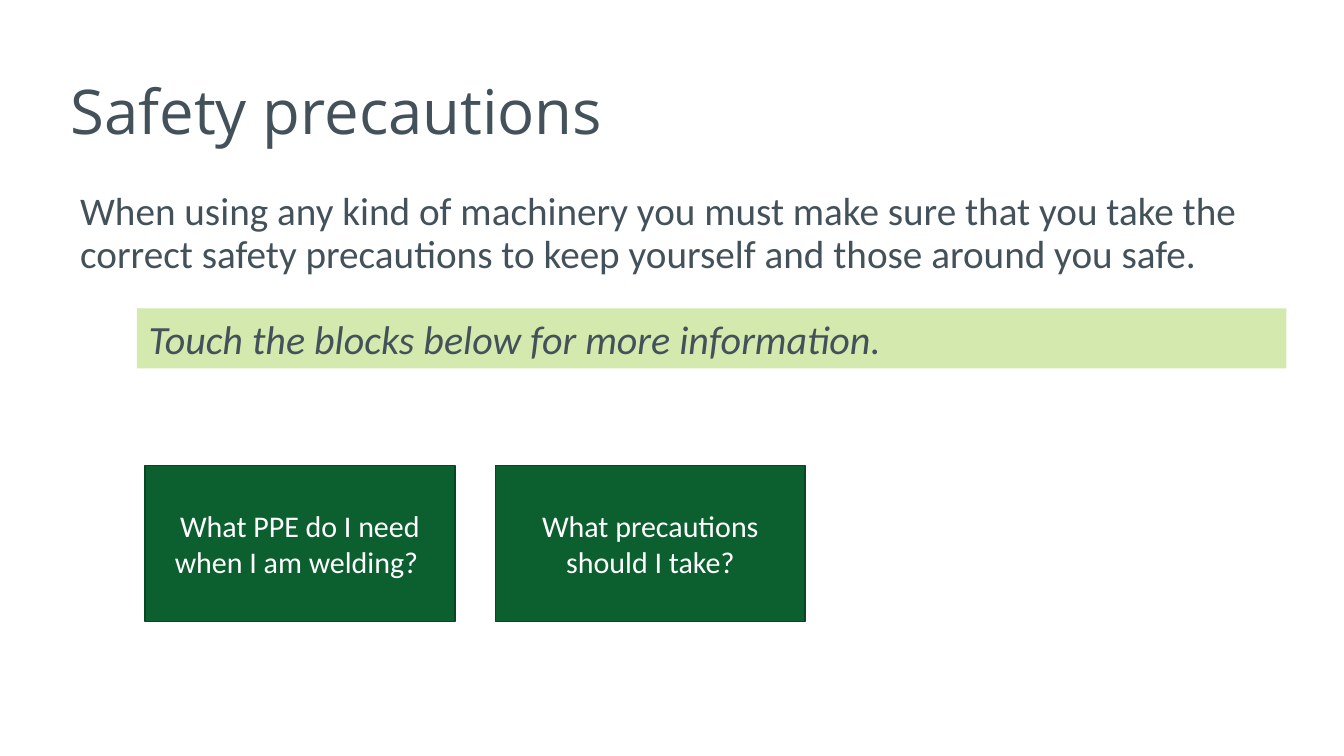
import pptx
import pptx.util
import pptx.dml.color
import pptx.enum.shapes
import pptx.enum.text

Inches, Pt = pptx.util.Inches, pptx.util.Pt
ALIGN, ANCHOR = pptx.enum.text.PP_ALIGN, pptx.enum.text.MSO_ANCHOR
RECTANGLE = pptx.enum.shapes.MSO_SHAPE.RECTANGLE

COLOURS = {
    "slate": "43525A",
    "lime": "D3E9AD",
    "green": "0C6030",
    "dark green": "094724",
    "white": "FFFFFF",
}


def rgb(name):
    return pptx.dml.color.RGBColor.from_string(COLOURS[name])


def write(shape, text, size, colour="slate", font="Calibri", align=ALIGN.LEFT, anchor=ANCHOR.TOP):
    """Put one formatted paragraph into a shape and return the paragraph."""
    frame = shape.text_frame
    frame.text = text
    frame.word_wrap = True
    frame.auto_size = pptx.enum.text.MSO_AUTO_SIZE.NONE
    frame.vertical_anchor = anchor
    paragraph = frame.paragraphs[0]
    paragraph.alignment = align
    run_font = paragraph.runs[0].font
    run_font.name, run_font.size = font, Pt(size)
    run_font.color.rgb = rgb(colour)
    return paragraph


presentation = pptx.Presentation()
presentation.slide_width, presentation.slide_height = Inches(11.2), Inches(6.3)
slide = presentation.slides.add_slide(presentation.slide_layouts[5])

# Title
title = slide.shapes.title
title.left, title.top = Inches(0.49), Inches(0.34)
title.width, title.height = Inches(9.66), Inches(1.22)
heading = write(title, "Safety precautions", 37, font="Open Sans", anchor=ANCHOR.MIDDLE)
heading.line_spacing = 0.9

# Introduction
introduction = slide.shapes.add_textbox(Inches(0.57), Inches(1.55), Inches(10.07), Inches(1.03))
paragraph = write(
    introduction,
    "When using any kind of machinery you must make sure that you take the "
    "correct safety precautions to keep yourself and those around you safe.",
    23.5,
)
paragraph.line_spacing = 0.9
paragraph.space_before = Pt(8.4)

# Instruction bar
bar = slide.shapes.add_shape(RECTANGLE, Inches(1.14), Inches(2.57), Inches(9.58), Inches(0.5))
bar.shadow.inherit = False
bar.fill.solid()
bar.fill.fore_color.rgb = rgb("lime")
bar.line.fill.background()
instruction = write(bar, "Touch the blocks below for more information.", 24)
instruction.runs[0].font.italic = True

# Question blocks
BLOCK_LEFT, BLOCK_STEP = 1.21, 2.92
questions = ["What PPE do I need when I am welding? ", "What precautions should I take?"]
for column, question in enumerate(questions):
    block = slide.shapes.add_shape(
        RECTANGLE, Inches(BLOCK_LEFT + column * BLOCK_STEP), Inches(3.88), Inches(2.58), Inches(1.3)
    )
    block.shadow.inherit = False
    block.fill.solid()
    block.fill.fore_color.rgb = rgb("green")
    block.line.color.rgb = rgb("dark green")
    block.line.width = Pt(1)
    write(block, question, 18, "white", align=ALIGN.CENTER, anchor=ANCHOR.MIDDLE)

presentation.save("out.pptx")
